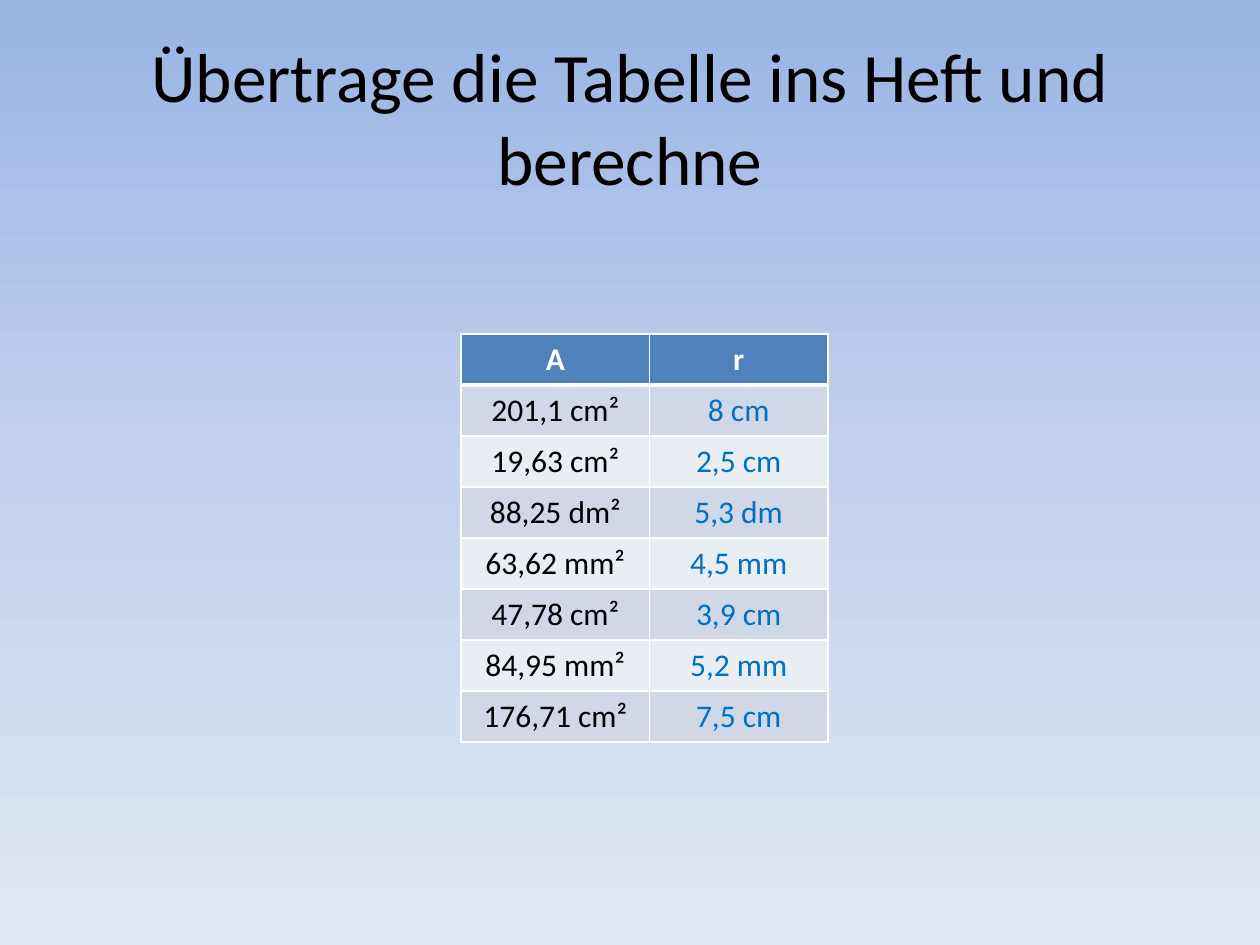
from copy import deepcopy

from lxml import etree
from pptx import Presentation
from pptx.dml.color import RGBColor
from pptx.enum.text import MSO_ANCHOR, PP_ALIGN
from pptx.oxml.ns import qn
from pptx.util import Inches, Pt

CENTER = PP_ALIGN.CENTER
MIDDLE = MSO_ANCHOR.MIDDLE
FONT = "Calibri"
WHITE, BLACK, BLUE = "FFFFFF", "000000", "0070C0"
HEADER_FILL = "4F81BD"
BAND_FILLS = ("D0D8E8", "E9EDF4")
BACKGROUND_STOPS = ((0, "9AB5E4"), (0.5, "C2D1ED"), (1, "E1E8F5"))
COLUMN_SHARES = (0.514, 0.486)
ROWS = (
    ("A", "r"),
    ("201,1 cm²", "8 cm"),
    ("19,63 cm²", "2,5 cm"),
    ("88,25 dm²", "5,3 dm"),
    ("63,62 mm²", "4,5 mm"),
    ("47,78 cm²", "3,9 cm"),
    ("84,95 mm²", "5,2 mm"),
    ("176,71 cm²", "7,5 cm"),
)


def color(value):
    return RGBColor.from_string(value)


def write_text(text_frame, text, size, text_color, bold=False):
    paragraph = text_frame.paragraphs[0]
    paragraph.alignment = CENTER
    run = paragraph.add_run()
    run.text = text
    run.font.name = FONT
    run.font.size = Pt(size)
    run.font.bold = bold
    run.font.color.rgb = color(text_color)


def paint_background(slide):
    fill = slide.background.fill
    fill.gradient()
    fill.gradient_angle = 270
    stop_list = next(slide.element.iter(qn("a:gsLst")))
    stop_list.append(deepcopy(stop_list[-1]))
    for stop, (position, value) in zip(fill.gradient_stops, BACKGROUND_STOPS):
        stop.position = position
        stop.color.rgb = color(value)


def add_title(slide, box):
    text_frame = slide.shapes.add_textbox(*box).text_frame
    text_frame.word_wrap = True
    text_frame.vertical_anchor = MIDDLE
    write_text(text_frame, "Übertrage die Tabelle ins Heft und berechne", 39.6, BLACK)


def set_borders(cell, bottom_width):
    properties = cell._tc.get_or_add_tcPr()
    widths = {"a:lnL": 1, "a:lnR": 1, "a:lnT": 1, "a:lnB": bottom_width}
    for index, (tag, width) in enumerate(widths.items()):
        line = etree.Element(qn(tag), w=str(Pt(width)))
        solid_fill = etree.SubElement(line, qn("a:solidFill"))
        etree.SubElement(solid_fill, qn("a:srgbClr"), val=WHITE)
        properties.insert(index, line)


def add_value_table(slide, box):
    left, top, width, height = box
    table = slide.shapes.add_table(len(ROWS), len(COLUMN_SHARES), *box).table
    for column, share in zip(table.columns, COLUMN_SHARES):
        column.width = int(width * share)
    for row_index, values in enumerate(ROWS):
        table.rows[row_index].height = height // len(ROWS)
        header = row_index == 0
        fill_color = HEADER_FILL if header else BAND_FILLS[(row_index - 1) % 2]
        text_colors = (WHITE, WHITE) if header else (BLACK, BLUE)
        for column_index, text in enumerate(values):
            cell = table.cell(row_index, column_index)
            cell.fill.solid()
            cell.fill.fore_color.rgb = color(fill_color)
            set_borders(cell, 3 if header else 1)
            write_text(cell.text_frame, text, 18, text_colors[column_index], header)


def main():
    presentation = Presentation()
    presentation.slide_width = Inches(10)
    presentation.slide_height = Inches(7.5)
    slide = presentation.slides.add_slide(presentation.slide_layouts[6])
    paint_background(slide)
    add_title(slide, [Inches(length) for length in (0.5, 0.3, 9, 1.25)])
    add_value_table(slide, [Inches(length) for length in (3.66, 2.65, 2.91, 3.24)])
    presentation.save("out.pptx")


if __name__ == "__main__":
    main()
